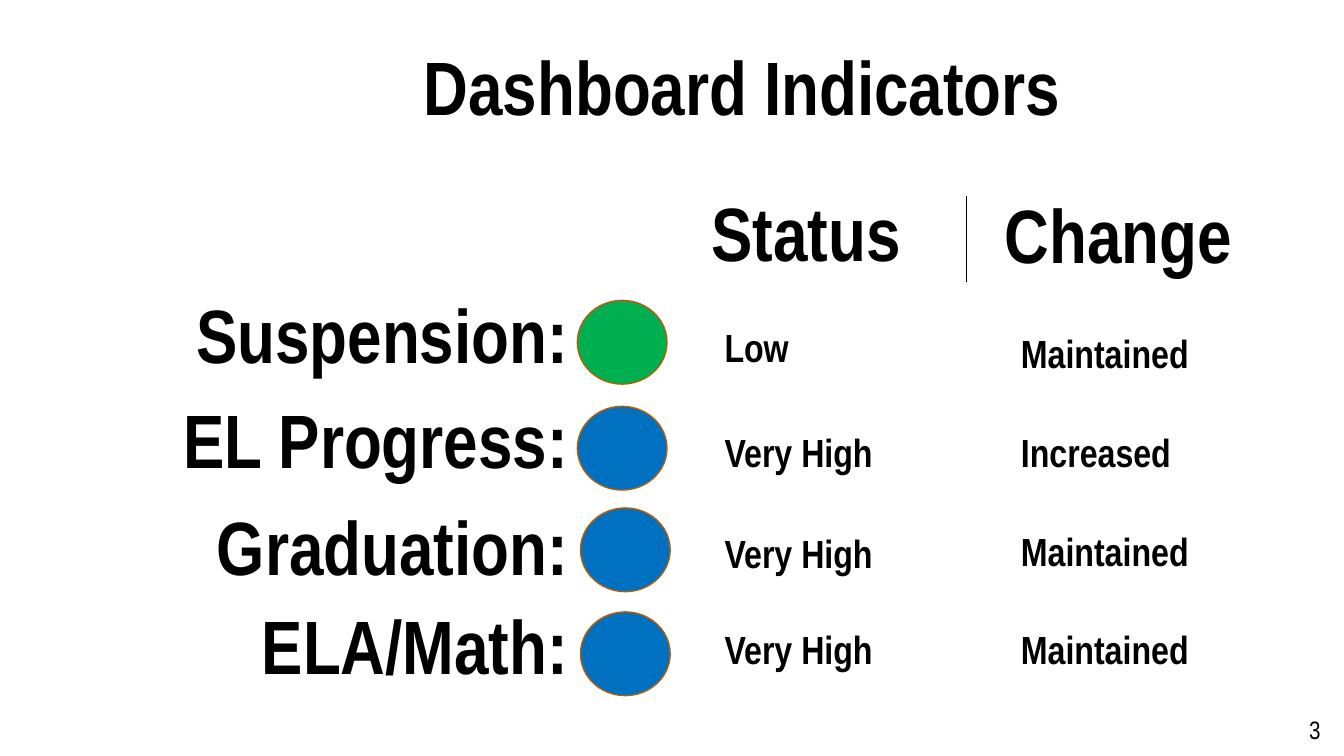
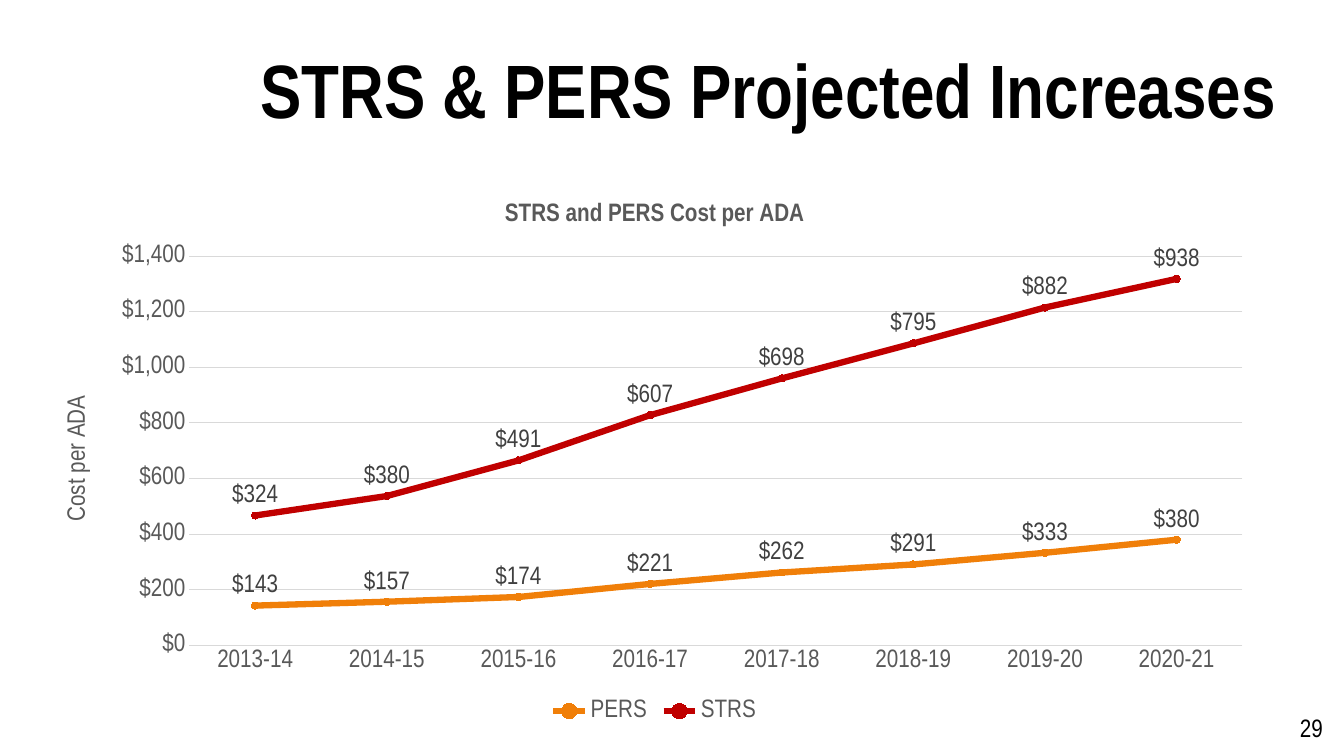
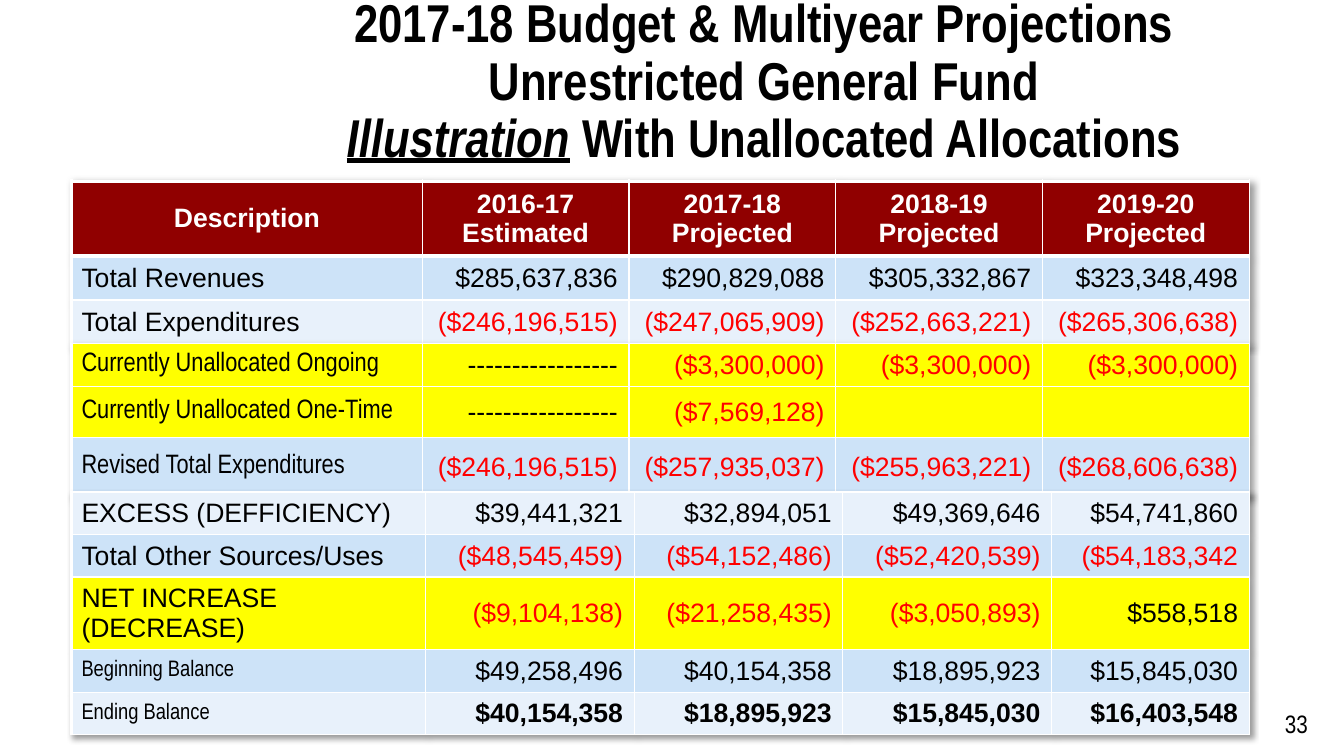
import pptx
import pptx.util
import pptx.dml.color
import pptx.chart.data
import pptx.enum.chart
import pptx.enum.shapes
import pptx.enum.text
import pptx.oxml
import pptx.oxml.ns
from dataclasses import dataclass

Cm, Pt = pptx.util.Cm, pptx.util.Pt
ALIGN = pptx.enum.text.PP_ALIGN
ANCHOR = pptx.enum.text.MSO_ANCHOR
AUTO_SIZE = pptx.enum.text.MSO_AUTO_SIZE


@dataclass(frozen=True)
class Theme:
    narrow: str = "Arial Narrow"
    wide: str = "Arial"
    black: str = "000000"
    white: str = "FFFFFF"
    red: str = "FF0000"
    green: str = "00B050"
    blue: str = "0070C0"
    rim: str = "B25E07"
    orange: str = "F07F09"
    crimson: str = "C00000"
    axis: str = "595959"
    label: str = "404040"
    grid: str = "D9D9D9"
    header: str = "900000"
    band: str = "CDE3F8"
    pale: str = "E8F1FB"
    yellow: str = "FFFF00"
    display: int = 54
    title_small: int = 38
    rating: int = 28
    cell: int = 19
    small: int = 18
    cell_small: int = 16


T = Theme()


def rgb(value):
    return pptx.dml.color.RGBColor.from_string(value)


def xml(markup):
    """Parse an element, declaring the drawing and chart namespaces."""
    names = pptx.oxml.ns.nsdecls("a", "c")
    tag, rest = markup.split(">", 1)
    slash = "/" if tag.endswith("/") else ""
    return pptx.oxml.parse_xml(f"{tag.rstrip('/')} {names}{slash}>{rest}")


class Deck:
    def __init__(self):
        self.prs = pptx.Presentation()
        self.prs.slide_width, self.prs.slide_height = Cm(33.87), Cm(19.05)
        self.s = None

    def font(self, font, size, color=T.black, bold=False, name=T.narrow):
        font.name, font.size, font.bold = name, Pt(size), bold
        font.color.rgb = rgb(color)

    def slide(self, x, y, lines, size=T.display):
        """Start a slide; each title line is a list of (text, emphasised)."""
        self.s = self.prs.slides.add_slide(self.prs.slide_layouts[5])
        sp = self.s.shapes.title
        sp.left, sp.top, sp.width, sp.height = Cm(x), Cm(y), Cm(28.52), Cm(3.68)
        tf = sp.text_frame
        tf.word_wrap, tf.auto_size = True, AUTO_SIZE.NONE
        tf.vertical_anchor = ANCHOR.MIDDLE
        p = tf.paragraphs[0]
        p.alignment, p.line_spacing = ALIGN.CENTER, 0.9
        for i, line in enumerate(lines):
            if i:
                p.add_line_break()
            for text, emphasised in line:
                r = p.add_run()
                r.text = text
                if emphasised:
                    r.font.italic = r.font.underline = True
        self.font(p.font, size, bold=True)

    def text(self, x, y, w, h, text, size, bold=True, align=ALIGN.LEFT, wrap=False):
        tf = self.s.shapes.add_textbox(Cm(x), Cm(y), Cm(w), Cm(h)).text_frame
        tf.word_wrap, tf.auto_size = wrap, AUTO_SIZE.SHAPE_TO_FIT_TEXT
        p = tf.paragraphs[0]
        p.text, p.alignment = text, align
        self.font(p.font, size, bold=bold)

    def page_number(self, x, y, w, number):
        self.text(x, y, w, 1.02, number, T.small, bold=False, wrap=True)

    def dot(self, x, y, color):
        sp = self.s.shapes.add_shape(
            pptx.enum.shapes.MSO_SHAPE.OVAL, Cm(x), Cm(y), Cm(2.26), Cm(2.11))
        sp.shadow.inherit = False
        sp.fill.solid()
        sp.fill.fore_color.rgb = rgb(color)
        sp.line.color.rgb, sp.line.width = rgb(T.rim), Pt(1)

    def rule(self, x, top, bottom):
        line = self.s.shapes.add_connector(
            pptx.enum.shapes.MSO_CONNECTOR.STRAIGHT, Cm(x), Cm(top), Cm(x), Cm(bottom))
        line.line.color.rgb, line.line.width = rgb(T.black), Pt(0.5)
        line._element.spPr.append(xml("<a:effectLst/>"))

    def line_chart(self, x, y, w, h, title, axis_title, cats, series):
        """Stacked lines; series holds (name, values, colour)."""
        money = '"$"#,##0'
        enum = pptx.enum.chart
        data = pptx.chart.data.CategoryChartData(number_format=money)
        data.categories = cats
        for name, values, _ in series:
            data.add_series(name, values)
        chart = self.s.shapes.add_chart(
            enum.XL_CHART_TYPE.LINE_MARKERS_STACKED, Cm(x), Cm(y), Cm(w), Cm(h), data).chart
        self.font(chart.font, T.small, T.axis)

        # Axes and titles
        cat, val = chart.category_axis, chart.value_axis
        chart.has_title = True
        for owner, words, bold in ((chart.chart_title, title, True),
                                   (val.axis_title, axis_title, False)):
            p = owner.text_frame.paragraphs[0]
            p.text = words
            self.font(p.font, T.small, T.axis, bold)
        chart.chart_title.include_in_layout = False
        for axis in (cat, val):
            axis.major_tick_mark = axis.minor_tick_mark = enum.XL_TICK_MARK.NONE
            self.font(axis.tick_labels.font, T.small, T.axis)
        val.minimum_scale, val.maximum_scale, val.major_unit = 0, 1400, 200
        val.tick_labels.number_format = money
        val.tick_labels.number_format_is_linked = False
        val.format.line.fill.background()
        for line in (cat.format.line, val.major_gridlines.format.line):
            line.color.rgb, line.width = rgb(T.grid), Pt(0.75)

        # Legend
        chart.has_legend = True
        chart.legend.position = enum.XL_LEGEND_POSITION.BOTTOM
        chart.legend.include_in_layout = False
        self.font(chart.legend.font, T.small, T.axis)

        # Series
        for ser, (_, _, color) in zip(chart.plots[0].series, series):
            ser.smooth = False
            ser.format.line.color.rgb, ser.format.line.width = rgb(color), Pt(4.5)
            ser.marker.style, ser.marker.size = enum.XL_MARKER_STYLE.CIRCLE, 5
            ser.marker.format.fill.solid()
            ser.marker.format.fill.fore_color.rgb = rgb(color)
            ser.marker.format.line.color.rgb = rgb(color)
            labels = ser.data_labels
            labels.show_value, labels.position = True, enum.XL_LABEL_POSITION.ABOVE
            labels.number_format, labels.number_format_is_linked = money, False
            self.font(labels.font, T.small, T.label)

        # Plot area, as fractions of the chart
        area = chart._chartSpace.chart.plotArea
        for old in area.findall(pptx.oxml.ns.qn("c:layout")):
            area.remove(old)
        place = "".join(f'<c:{k} val="{v}"/>' for k, v in (
            ("layoutTarget", "inner"), ("xMode", "edge"), ("yMode", "edge"),
            ("x", 0.12), ("y", 0.14), ("w", 0.86), ("h", 0.71)))
        area.insert(0, xml(f"<c:layout><c:manualLayout>{place}</c:manualLayout></c:layout>"))

    def cell(self, cell, text, fill, size, color, name, bold, align, borders):
        cell.fill.solid()
        cell.fill.fore_color.rgb = rgb(fill)
        cell.vertical_anchor = ANCHOR.MIDDLE
        if align == ALIGN.RIGHT:
            cell.margin_left = cell.margin_right = Cm(0.28)
            cell.margin_top = cell.margin_bottom = Cm(0.15)
        cell.text_frame.text = text
        for p in cell.text_frame.paragraphs:
            p.alignment = align
            self.font(p.font, size, color, bold, name)
        tcPr = cell._tc.get_or_add_tcPr()
        for i, (side, width) in enumerate(zip("LRTB", borders)):
            tcPr.insert(i, xml(
                f'<a:ln{side} w="{Pt(width)}"><a:solidFill><a:srgbClr val="{T.white}"/>'
                f"</a:solidFill></a:ln{side}>"))

    def table(self, x, y, cols, rows):
        """Each row is (height, fill, label style, texts)."""
        frame = self.s.shapes.add_table(len(rows), len(cols), Cm(x), Cm(y),
                                        Cm(sum(cols)), Cm(sum(row[0] for row in rows)))
        table = frame.table
        table.horz_banding = False
        table._tbl.tblPr.insert(0, xml(
            '<a:effectLst><a:outerShdw blurRad="50800" dist="38100" dir="2700000">'
            f'<a:srgbClr val="{T.black}"><a:alpha val="40000"/></a:srgbClr>'
            "</a:outerShdw></a:effectLst>"))
        for column, width in zip(table.columns, cols):
            column.width = Cm(width)
        after_header = False
        for i, (height, fill, (name, size), texts) in enumerate(rows):
            table.rows[i].height = Cm(height)
            head = fill == T.header
            for j, text in enumerate(texts):
                borders = (1 if j else 3, 1, 3 if head or after_header else 1, 3 if head else 1)
                if head:
                    look = (T.cell, T.white, T.wide, True, ALIGN.CENTER)
                elif j == 0:
                    look = (size, T.black, name, False, ALIGN.LEFT)
                else:
                    color = T.red if text.startswith("(") else T.black
                    total = texts[0] == "Ending Balance"
                    look = (T.cell, color, T.wide, total, ALIGN.RIGHT)
                self.cell(table.cell(i, j), text, fill, *look, borders)
            after_header = head


def indicators(deck):
    deck.slide(4.45, 0.46, [[("Dashboard Indicators", False)]])
    # Column headings
    deck.text(17.68, 4.57, 5.33, 2.57, "Status", T.display)
    deck.text(25.07, 4.6, 6.3, 2.57, "Change", T.display)
    deck.rule(24.36, 4.93, 7.11)
    # Indicator rows: label, dot, status, change
    rows = [
        (("Suspension:", 9.98, 7.14), (14.55, 7.57, T.green),
         ("Low", 2.16, 8.03), ("Maintained", 4.78, 8.18)),
        (("EL Progress:", 10.29, 9.78), (14.55, 10.24, T.blue),
         ("Very High", 5.87, 10.67), ("Increased", 4.32, 10.67)),
        (("Graduation:", 9.45, 12.47), (14.63, 12.8, T.blue),
         ("Very High", 5.87, 13.21), ("Maintained", 4.78, 13.16)),
        (("ELA/Math:", 8.31, 14.96), (14.63, 15.42, T.blue),
         ("Very High", 5.87, 15.62), ("Maintained", 4.78, 15.62)),
    ]
    for (label, width, top), dot, status, change in rows:
        deck.text(14.57 - width, top, width, 2.57, label, T.display, align=ALIGN.RIGHT)
        deck.dot(*dot)
        for x, (text, w, y) in ((18.01, status), (25.48, change)):
            deck.text(x, y, w, 1.45, text, T.rating)
    deck.page_number(32.74, 17.88, 0.89, "3")


def pensions(deck):
    deck.slide(5.11, 0.53, [[("STRS & PERS Projected Increases", False)]])
    deck.line_chart(
        1.07, 4.52, 30.86, 13.82, "STRS and PERS Cost per ADA", "Cost per ADA",
        [f"{year}-{year % 100 + 1}" for year in range(2013, 2021)],
        [("PERS", (143, 157, 174, 221, 262, 291, 333, 380), T.orange),
         ("STRS", (324, 380, 491, 607, 698, 795, 882, 938), T.crimson)])
    deck.page_number(32.51, 17.83, 1.63, "29")


def budget(deck):
    deck.slide(5, 0.25, [
        [("2017-18 Budget & Multiyear Projections", False)],
        [("Unrestricted General Fund", False)],
        [("Illustration", True), (" With Unallocated Allocations", False)],
    ], T.title_small)
    wide, narrow = (T.wide, T.cell), (T.narrow, T.cell)
    small = (T.narrow, T.cell_small)
    dashes = "-" * 17
    cols = [8.84] + [5.21] * 4
    # Revenues and expenditures
    deck.table(1.8, 4.57, cols, [
        (1.88, T.header, wide, ("Description", "2016-17\nEstimated", "2017-18\nProjected",
                                "2018-19\nProjected", "2019-20\nProjected")),
        (1.11, T.band, wide, ("Total Revenues", "$285,637,836", "$290,829,088",
                              "$305,332,867", "$323,348,498")),
        (1.11, T.pale, wide, ("Total Expenditures", "($246,196,515)", "($247,065,909)",
                              "($252,663,221)", "($265,306,638)")),
    ])
    # Unallocated amounts
    deck.table(1.8, 8.66, cols, [
        (1.07, T.yellow, narrow, ("Currently Unallocated Ongoing", dashes, "($3,300,000)",
                                  "($3,300,000)", "($3,300,000)")),
        (1.3, T.yellow, narrow, ("Currently Unallocated One-Time", dashes, "($7,569,128)",
                                 "", "")),
        (1.47, T.band, narrow, ("Revised Total Expenditures", "($246,196,515)",
                                "($257,935,037)", "($255,963,221)", "($268,606,638)")),
    ])
    # Balances
    deck.table(1.8, 12.4, [8.92, 5.26, 5.26, 5.26, 4.98], [
        (1.07, T.pale, wide, ("EXCESS (DEFFICIENCY)", "$39,441,321", "$32,894,051",
                              "$49,369,646", "$54,741,860")),
        (1.07, T.band, wide, ("Total Other Sources/Uses", "($48,545,459)", "($54,152,486)",
                              "($52,420,539)", "($54,183,342")),
        (1.83, T.yellow, wide, ("NET INCREASE (DECREASE)", "($9,104,138)", "($21,258,435)",
                                "($3,050,893)", "$558,518")),
        (1.07, T.band, small, ("Beginning Balance", "$49,258,496", "$40,154,358",
                               "$18,895,923", "$15,845,030")),
        (1.07, T.pale, small, ("Ending Balance", "$40,154,358", "$18,895,923",
                               "$15,845,030", "$16,403,548")),
    ])
    deck.page_number(32.13, 17.73, 1.17, "33")


def main():
    deck = Deck()
    for build in (indicators, pensions, budget):
        build(deck)
    deck.prs.save("out.pptx")


if __name__ == "__main__":
    main()
